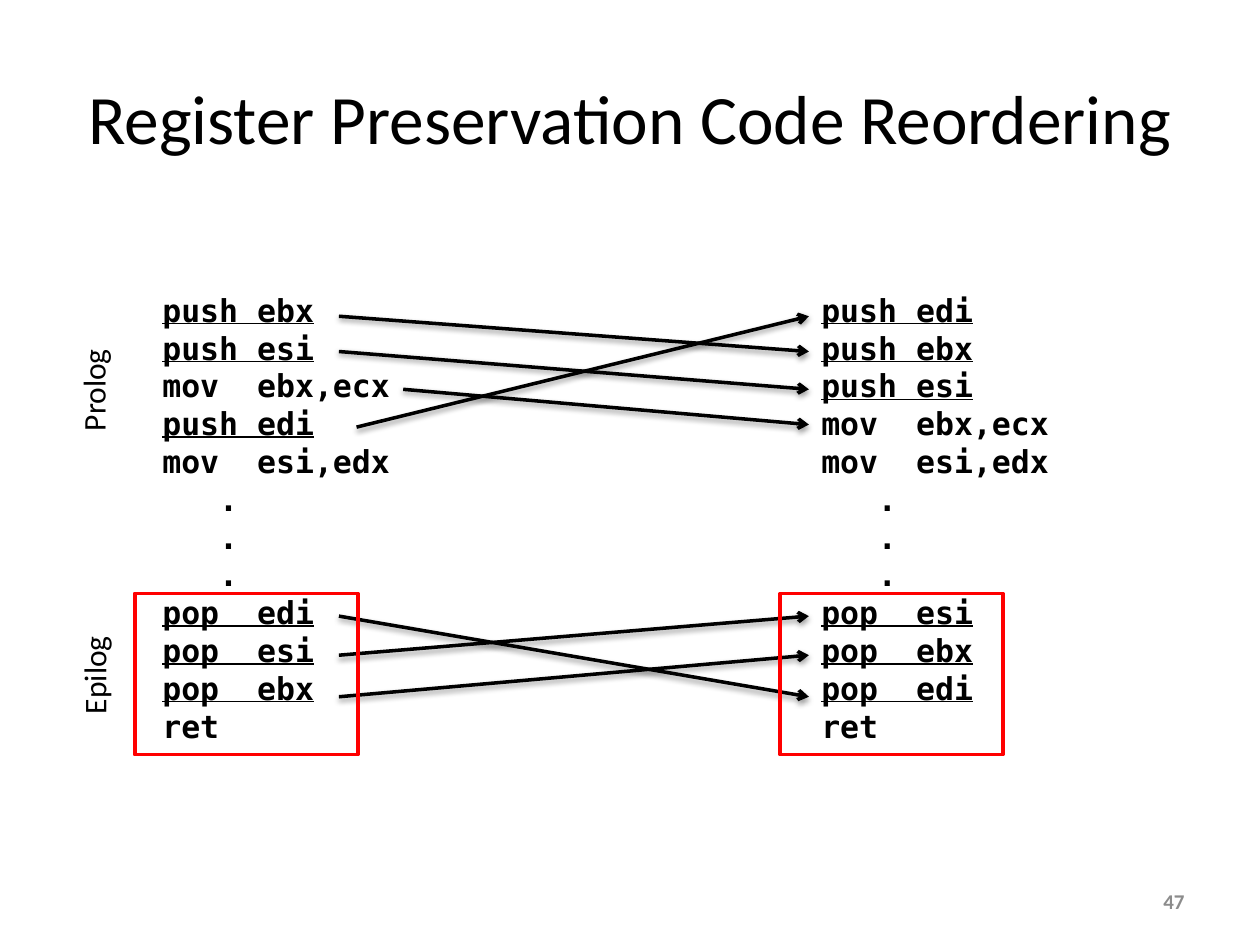
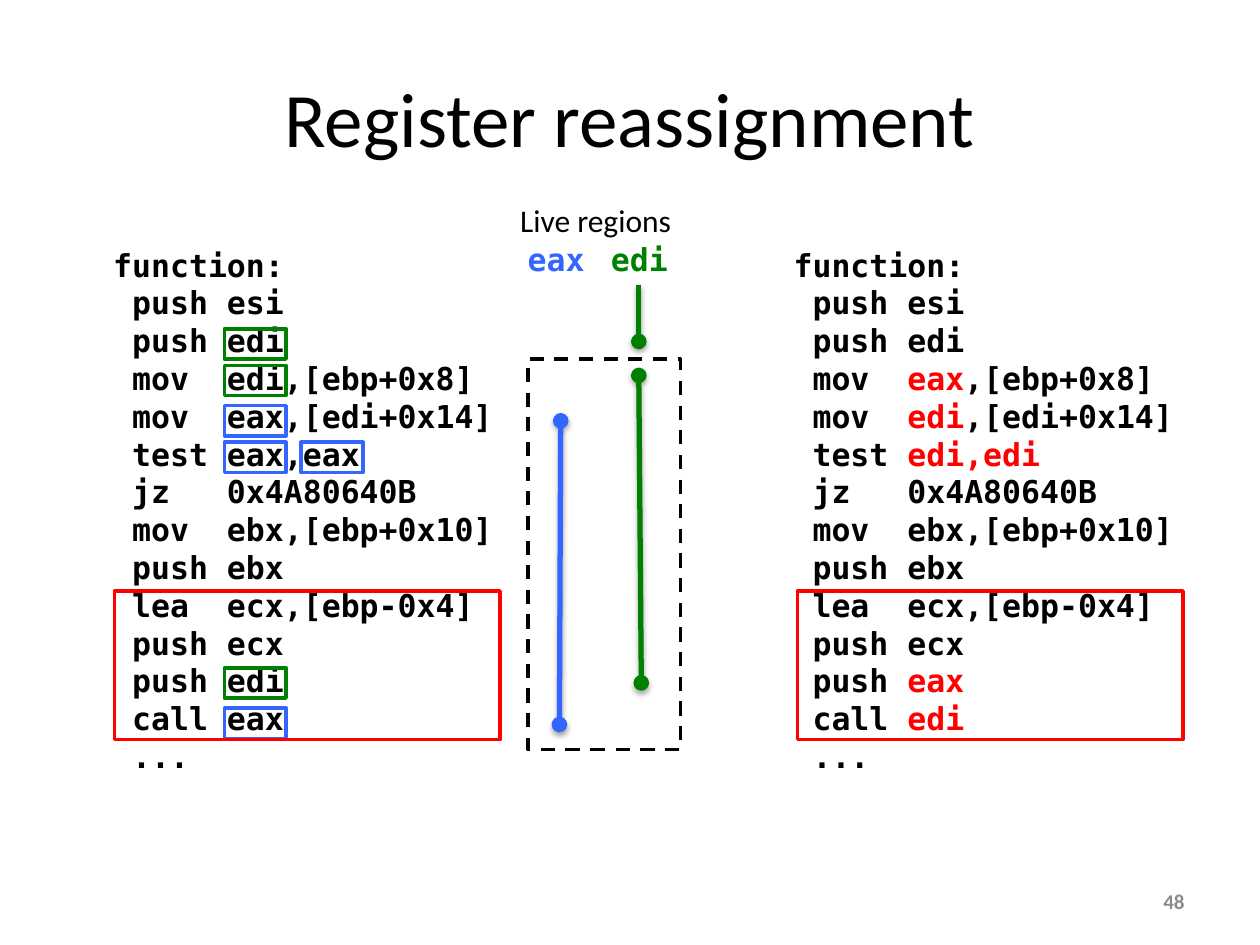
"""Build two slides on register preservation reordering and register reassignment."""
import pptx
import pptx.dml.color
import pptx.enum.dml
import pptx.enum.shapes
import pptx.enum.text
import pptx.oxml
import pptx.oxml.ns
import pptx.util

PX = 9144
COLORS = {"black": "000000", "grey": "8C8C8C", "red": "FF0000", "blue": "3366FF", "green": "008000"}
RGB = {name: pptx.dml.color.RGBColor.from_string(value) for name, value in COLORS.items()}
FORMATS = {
    "title": {"name": "Calibri", "size": pptx.util.Pt(44)},
    "long title": {"name": "Calibri", "size": pptx.util.Pt(39.6)},
    "number": {"name": "Calibri", "size": pptx.util.Pt(12), "bold": True},
    "label": {"name": "Calibri", "size": pptx.util.Pt(18)},
    "code": {"name": "DejaVu Sans Mono", "size": pptx.util.Pt(18), "bold": True},
}
ALIGN = pptx.enum.text.PP_ALIGN
MIDDLE = pptx.enum.text.MSO_ANCHOR.MIDDLE
DOT_INDENT = 45


def write(shape, box, lines, style, color="black", accent="red", underlined=(),
          align=ALIGN.LEFT, wrap=True, grow=True):
    """Place a text shape and fill it; parts between bars take the accent colour."""
    shape.left, shape.top, shape.width, shape.height = [n * PX for n in box]
    frame = shape.text_frame
    frame.word_wrap = wrap
    sizes = pptx.enum.text.MSO_AUTO_SIZE
    frame.auto_size = sizes.SHAPE_TO_FIT_TEXT if grow else sizes.NONE
    if not grow:
        frame.vertical_anchor = MIDDLE
    for row, line in enumerate(lines):
        paragraph = frame.paragraphs[0] if row == 0 else frame.add_paragraph()
        paragraph.alignment = align
        if line == ".":
            paragraph._p.get_or_add_pPr().set("marL", str(DOT_INDENT * PX))
        for part, words in enumerate(line.split("|")):
            if words:
                run = paragraph.add_run()
                run.text = words
                for name, value in FORMATS[style].items():
                    setattr(run.font, name, value)
                run.font.underline = line.split()[0] in underlined
                run.font.color.rgb = RGB[accent if part % 2 else color]
    return shape


def draw_line(slide, start, end, color, width, ends, shadow):
    """Draw a connector with the given end marks and a soft shadow below it."""
    line = slide.shapes.add_connector(pptx.enum.shapes.MSO_CONNECTOR.STRAIGHT,
                                      *[n * PX for n in (*start, *end)])
    line.line.color.rgb = RGB[color]
    line.line.width = pptx.util.Pt(width)
    outline = line.line._get_or_add_ln()
    for tag, mark in ends.items():
        outline.append(pptx.oxml.parse_xml(
            f'<a:{tag} {pptx.oxml.ns.nsdecls("a")} type="{mark}"/>'))
    alpha, distance = shadow
    line._element.spPr.append(pptx.oxml.parse_xml(
        f'<a:effectLst {pptx.oxml.ns.nsdecls("a")}><a:outerShdw blurRad="40000" '
        f'dist="{distance}" dir="5400000" rotWithShape="0"><a:srgbClr val="{COLORS["black"]}">'
        f'<a:alpha val="{alpha}"/></a:srgbClr></a:outerShdw></a:effectLst>'))


deck = pptx.Presentation()
deck.slide_width, deck.slide_height = 1000 * PX, 750 * PX

slides = []
for number, heading, style in [(47, "Register Preservation Code Reordering", "long title"),
                               (48, "Register reassignment", "title")]:
    slide = deck.slides.add_slide(deck.slide_layouts[5])
    write(slide.shapes.title, (50, 30, 900, 125), [heading], style, align=ALIGN.CENTER, grow=False)
    write(slide.shapes.add_textbox(0, 0, 0, 0), (717, 695, 233, 40), [str(number)], "number",
          color="grey", align=ALIGN.RIGHT, grow=False)
    slides.append(slide)
reordering, reassignment = slides

before = ["push ebx", "push esi", "mov  ebx,ecx", "push edi", "mov  esi,edx", ".", ".", ".",
          "pop  edi", "pop  esi", "pop  ebx", "ret"]
after = ["push edi", "push ebx", "push esi", "mov  ebx,ecx", "mov  esi,edx", ".", ".", ".",
         "pop  esi", "pop  ebx", "pop  edi", "ret"]
for left, listing in [(119, before), (642, after)]:
    write(reordering.shapes.add_textbox(0, 0, 0, 0), (left, 226, 246, 374), listing, "code",
          underlined=("push", "pop"))

for start, end in [((269, 489), 553), ((269, 520), 489), ((269, 553), 520), ((269, 251), 279),
                   ((269, 279), 309), ((320, 309), 337), ((283, 339), 251)]:
    draw_line(reordering, start, (642, end), "black", 2, {"tailEnd": "arrow"}, (38000, 20000))

for words, box in [("Prolog", (31, 289, 86, 40)), ("Epilog", (33, 515, 83, 40))]:
    section = write(reordering.shapes.add_textbox(0, 0, 0, 0), box, [words], "label", wrap=False)
    section.rotation = 270

for start, end, color, ends in [
        ((445, 334), (444, 575), "blue", {"headEnd": "oval", "tailEnd": "oval"}),
        ((507, 298), (509, 542), "green", {"headEnd": "oval", "tailEnd": "oval"}),
        ((507, 226), (507, 271), "green", {"tailEnd": "oval"})]:
    draw_line(reassignment, start, end, color, 3, ends, (35000, 23000))

for words, box, style, color in [("eax", (409, 186, 66, 40), "code", "blue"),
                                 ("edi", (475, 186, 66, 40), "code", "green"),
                                 ("Live regions", (403, 155, 142, 40), "label", "black")]:
    write(reassignment.shapes.add_textbox(0, 0, 0, 0), box, [words], style, color, wrap=False)

assigned = ["function:", " push esi", " push edi", " mov  |edi|,[ebp+0x8]",
            " mov  |eax|,[edi+0x14]", " test |eax,eax|", " jz   0x4A80640B",
            " mov  ebx,[ebp+0x10]", " push ebx", " lea  ecx,[ebp-0x4]", " push ecx",
            " push |edi|", " call |eax|", " ..."]
swap = {"edi": "eax", "eax": "edi", "eax,eax": "edi,edi"}
reassigned = ["|".join(swap.get(words, words) for words in line.split("|")) for line in assigned]
for left, listing, accent in [(80, assigned, "black"), (620, reassigned, "red")]:
    write(reassignment.shapes.add_textbox(0, 0, 0, 0), (left, 190, 329, 434), listing, "code",
          accent=accent)

frames = [(reordering, (left, 471, 177, 128), "red") for left in (107, 619)]
frames += [(reassignment, (left, top, 49, 24), color) for left, top, color in [
    (178, 562, "blue"), (178, 351, "blue"), (239, 351, "blue"), (178, 322, "blue"),
    (178, 530, "green"), (178, 290, "green"), (178, 261, "green")]]
frames += [(reassignment, (419, 285, 121, 310), "black")]
frames += [(reassignment, (left, 469, 306, 118), "red") for left in (91, 633)]
for slide, box, color in frames:
    frame = slide.shapes.add_shape(pptx.enum.shapes.MSO_SHAPE.RECTANGLE, *[n * PX for n in box])
    frame.shadow.inherit = False
    frame.fill.background()
    frame.line.color.rgb = RGB[color]
    frame.line.width = pptx.util.Pt(2)
    if color == "black":
        frame.line.dash_style = pptx.enum.dml.MSO_LINE.DASH

deck.save("out.pptx")
